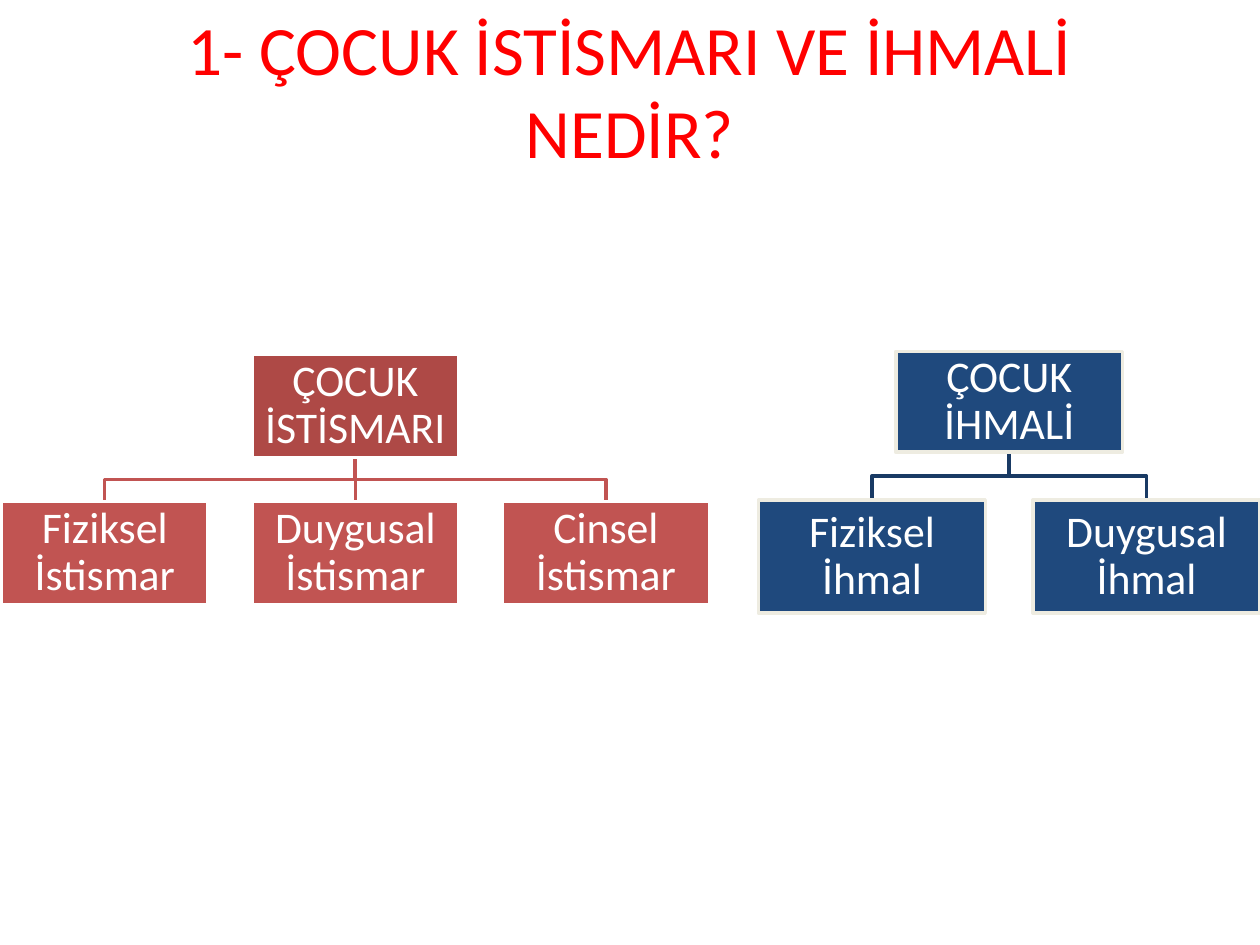
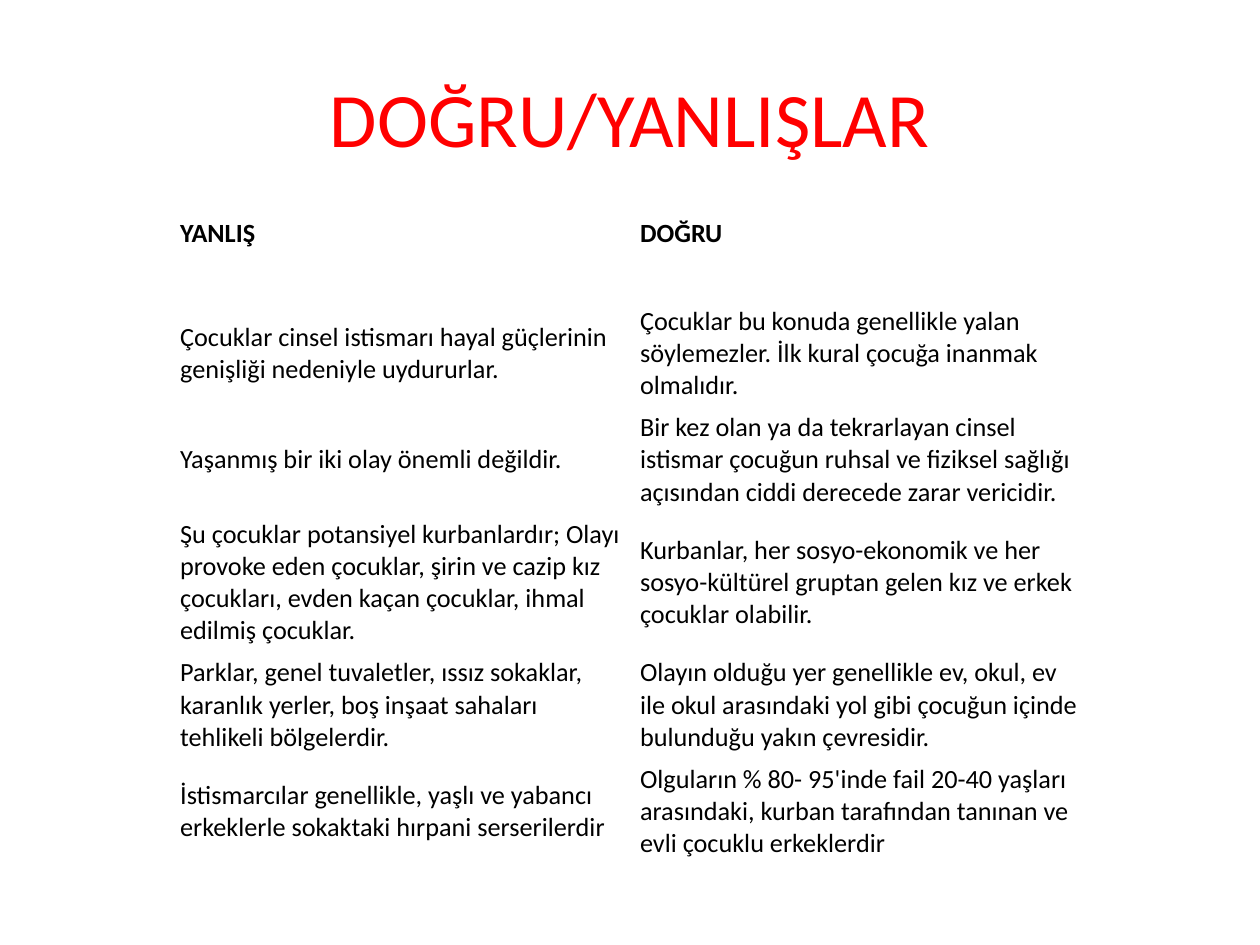
from pptx import Presentation
from pptx import util as u
from pptx.dml.color import RGBColor
from pptx.enum import shapes, text
from pptx.oxml import parse_xml
from pptx.oxml.ns import nsdecls

WIDE, HIGH = 10, 7.5
FONT = "Calibri"
HUES = {
    "title": "FF0000", "ink": "000000", "white": "FFFFFF",
    "rust": "AE4946", "red": "C15452",
    "navy": "1F497D", "wire": "193A64", "cream": "EEECE1",
}
RED = {"root": "rust", "kid": "red", "edge": "white", "wire": "red"}
BLUE = {"root": "navy", "kid": "navy", "edge": "cream", "wire": "wire"}
GAP = 0.21  # space between nodes, as a share of a node's width

MYTHS = [
    ("YANLIŞ", "DOĞRU"),
    ("", ""),
    ("Çocuklar cinsel istismarı hayal güçlerinin genişliği nedeniyle uydururlar.",
     "Çocuklar bu konuda genellikle yalan söylemezler. İlk kural çocuğa inanmak olmalıdır."),
    ("Yaşanmış bir iki olay önemli değildir.",
     "Bir kez olan ya da tekrarlayan cinsel istismar çocuğun ruhsal ve fiziksel sağlığı "
     "açısından ciddi derecede zarar vericidir."),
    ("Şu çocuklar potansiyel kurbanlardır; Olayı provoke eden çocuklar, şirin ve cazip kız "
     "çocukları, evden kaçan çocuklar, ihmal edilmiş çocuklar.",
     "Kurbanlar, her sosyo-ekonomik ve her sosyo-kültürel gruptan gelen kız ve erkek "
     "çocuklar olabilir."),
    ("Parklar, genel tuvaletler, ıssız sokaklar, karanlık yerler, boş inşaat sahaları "
     "tehlikeli bölgelerdir.",
     "Olayın olduğu yer genellikle ev, okul, ev ile okul arasındaki yol gibi çocuğun içinde "
     "bulunduğu yakın çevresidir."),
    ("İstismarcılar genellikle, yaşlı ve yabancı erkeklerle sokaktaki hırpani serserilerdir",
     "Olguların % 80- 95'inde fail 20-40 yaşları arasındaki, kurban tarafından tanınan ve "
     "evli çocuklu erkeklerdir"),
]
ROWS = (0.32, 0.32, 0.81, 0.81, 1.05, 0.81, 0.81)


def hue(name):
    return RGBColor.from_string(HUES[name])


def span(x, y, w, h):
    """Turn shares of the slide into lengths."""
    return (u.Inches(x * WIDE), u.Inches(y * HIGH),
            u.Inches(w * WIDE), u.Inches(h * HIGH))


def write(frame, words, size, color="ink", bold=False, align="LEFT", lead=None):
    frame.word_wrap = True
    par = frame.paragraphs[0]
    par.text = words
    par.alignment = getattr(text.PP_ALIGN, align)
    par.line_spacing = lead
    for run in par.runs or [par.add_run()]:
        font = run.font
        font.name, font.size, font.bold = FONT, u.Pt(size), bold
        font.color.rgb = hue(color)


def pad(item, side, end):
    item.margin_left = item.margin_right = u.Inches(side)
    item.margin_top = item.margin_bottom = u.Inches(end)


def head(slide, words, box, size):
    title = slide.shapes.title
    title.left, title.top, title.width, title.height = span(*box)
    frame = title.text_frame
    frame.auto_size = text.MSO_AUTO_SIZE.NONE
    frame.vertical_anchor = text.MSO_ANCHOR.MIDDLE
    write(frame, words, size, "title", align="CENTER")


def node(slide, words, box, fill, edge):
    rect = slide.shapes.add_shape(shapes.MSO_SHAPE.RECTANGLE, *box)
    rect.shadow.inherit = False
    rect.fill.solid()
    rect.fill.fore_color.rgb = hue(fill)
    rect.line.color.rgb = hue(edge)
    rect.line.width = u.Pt(2)
    frame = rect.text_frame
    frame.vertical_anchor = text.MSO_ANCHOR.MIDDLE
    pad(frame, 0.02, 0.02)
    write(frame, words, 25, "white", align="CENTER", lead=0.9)


def wire(slide, start, end, color):
    """Join a parent to a child: straight below it, or by way of a bend."""
    (ax, ay), (bx, by) = start, end
    if ax == bx:
        line = slide.shapes.add_connector(shapes.MSO_CONNECTOR.STRAIGHT, ax, ay, bx, by)
        line._element.spPr.append(parse_xml(f"<a:effectLst {nsdecls('a')}/>"))
    else:
        mid = (ay + by) // 2
        path = slide.shapes.build_freeform(ax, ay)
        path.add_line_segments([(ax, mid), (bx, mid), (bx, by)], close=False)
        line = path.convert_to_shape()
        line.fill.background()
        line.shadow.inherit = False
    line.line.color.rgb = hue(color)
    line.line.width = u.Pt(2)


def tree(slide, box, parts, root, kids, look):
    """Draw a root over a row of kids; parts weigh root, gap and kid heights."""
    x, y, w, h = span(*box)
    top, gap, low = (int(h * part / sum(parts)) for part in parts)
    wide = int(w / (len(kids) + GAP * (len(kids) - 1)))
    step = int(wide * (1 + GAP))
    lefts = [x + i * step for i in range(len(kids))]
    stem = (lefts[0] + lefts[-1]) // 2
    half, row = wide // 2, y + top + gap
    for left in lefts:
        wire(slide, (stem + half, y + top), (left + half, row), look["wire"])
    node(slide, root, (stem, y, wide, top), look["root"], look["edge"])
    for left, kid in zip(lefts, kids):
        node(slide, kid, (left, row, wide, low), look["kid"], look["edge"])


def grid(slide, box, data, rows):
    table = slide.shapes.add_table(len(data), len(data[0]), *span(*box)).table
    table.first_row = table.horz_banding = False
    for r, line in enumerate(data):
        table.rows[r].height = u.Inches(rows[r])
        for c, words in enumerate(line):
            cell = table.cell(r, c)
            cell.fill.background()
            cell.vertical_anchor = text.MSO_ANCHOR.MIDDLE
            pad(cell, 0.08, 0.04)
            write(cell.text_frame, words, 15, bold=r == 0)


def main():
    deck = Presentation()
    deck.slide_width, deck.slide_height = u.Inches(WIDE), u.Inches(HIGH)
    plain = deck.slide_layouts.get_by_name("Title Only")

    kinds = deck.slides.add_slide(plain)
    head(kinds, "1- ÇOCUK İSTİSMARI VE İHMALİ NEDİR?\v", (0.05, 0.07, 0.9, 0.147), 39.6)
    tree(kinds, (0.001, 0.375, 0.562, 0.265), (0.82, 0.35, 0.82), "ÇOCUK İSTİSMARI",
         ["Fiziksel İstismar", "Duygusal İstismar", "Cinsel İstismar"], RED)
    tree(kinds, (0.602, 0.372, 0.398, 0.277), (0.8, 0.38, 0.9), "ÇOCUK İHMALİ",
         ["Fiziksel İhmal", "Duygusal İhmal"], BLUE)

    myths = deck.slides.add_slide(plain)
    head(myths, "DOĞRU/YANLIŞLAR", (0.05, 0.04, 0.9, 0.167), 44)
    grid(myths, (0.135, 0.225, 0.73, 0.676), MYTHS, ROWS)
    deck.save("out.pptx")


if __name__ == "__main__":
    main()
